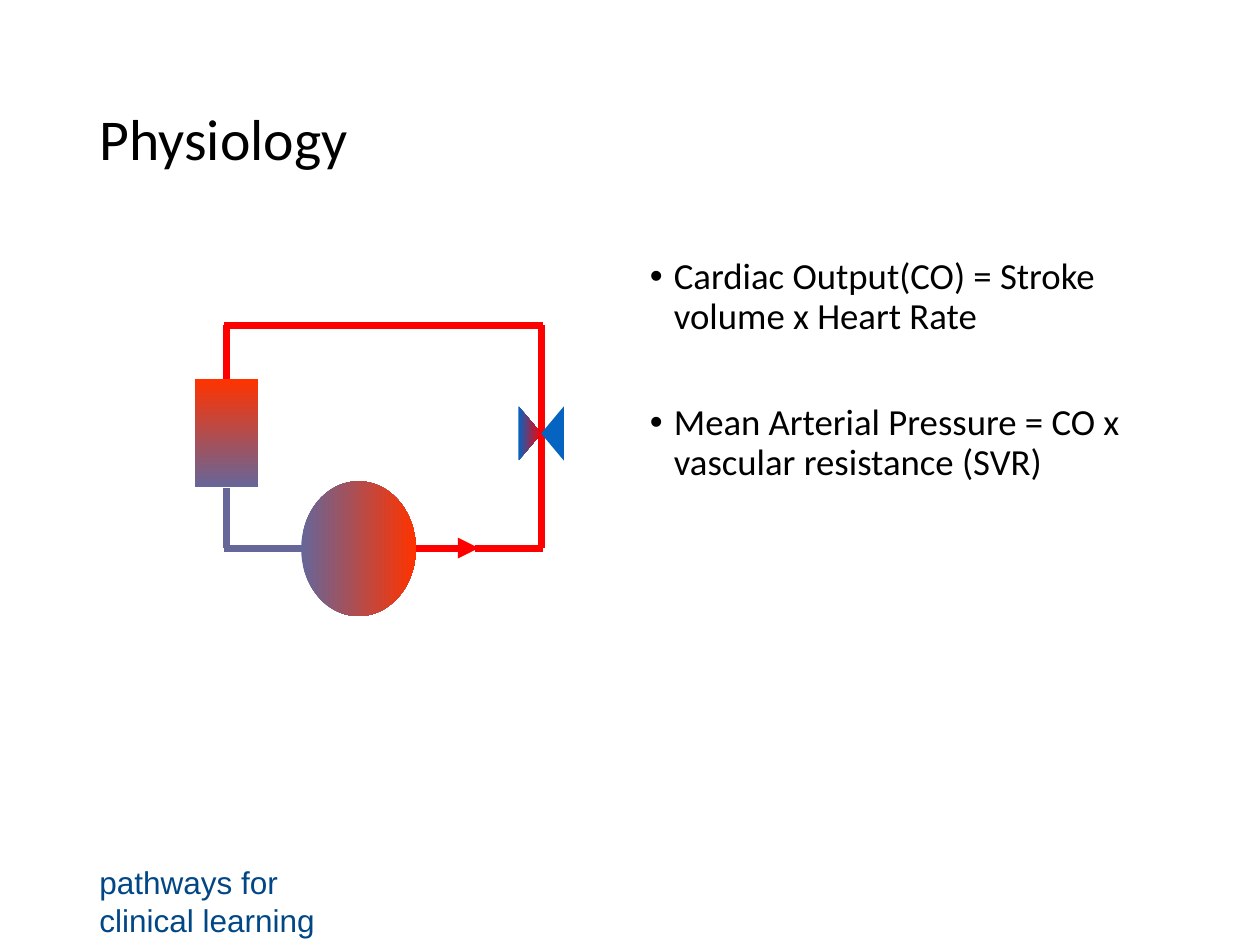
from lxml import etree
from pptx import Presentation
from pptx.dml.color import RGBColor
from pptx.enum.shapes import MSO_CONNECTOR, MSO_SHAPE
from pptx.enum.text import MSO_ANCHOR, PP_ALIGN
from pptx.oxml.ns import qn
from pptx.util import Inches, Pt

STRAIGHT = MSO_CONNECTOR.STRAIGHT
RECT = MSO_SHAPE.RECTANGLE
OVAL = MSO_SHAPE.OVAL
TRIANGLE = MSO_SHAPE.ISOSCELES_TRIANGLE
TOP, MIDDLE = MSO_ANCHOR.TOP, MSO_ANCHOR.MIDDLE
LEFT = PP_ALIGN.LEFT
BLACK = RGBColor(0x00, 0x00, 0x00)
NAVY = RGBColor(0x01, 0x47, 0x85)
BLUE = RGBColor(0x05, 0x63, 0xC1)
RED = RGBColor(0xFF, 0x00, 0x00)
ARTERIAL = RGBColor(0xFF, 0x33, 0x00)
VENOUS = RGBColor(0x66, 0x66, 0x99)
RECT_TOP, RECT_BOTTOM = 0, 2


class Deck:
    """Holds the style and the current slide."""

    font = "Calibri"
    line_width = Pt(4)

    def __init__(self, prs):
        self.s = prs.slides.add_slide(prs.slide_layouts[5])

    def add_text(self, p, text, size, color, font=None):
        r = p.add_run()
        r.text = text
        r.font.size = Pt(size)
        r.font.name = font or self.font
        r.font.color.rgb = color

    def title(self, text, box, size):
        sp = self.s.shapes.title
        sp.left, sp.top, sp.width, sp.height = (Inches(v) for v in box)
        tf = sp.text_frame
        tf.vertical_anchor = MIDDLE
        p = tf.paragraphs[0]
        p.alignment = LEFT
        p.line_spacing = 0.9
        self.add_text(p, text, size, BLACK)

    def frame(self, box, anchor):
        tf = self.s.shapes.add_textbox(*(Inches(v) for v in box)).text_frame
        tf.word_wrap = True
        tf.vertical_anchor = anchor
        return tf

    def label(self, text, box, size, color, font):
        tf = self.frame(box, MIDDLE)
        self.add_text(tf.paragraphs[0], text, size, color, font)

    def bullets(self, items, box, size, gap):
        tf = self.frame(box, TOP)
        for i, text in enumerate(items):
            p = tf.add_paragraph() if i else tf.paragraphs[0]
            pPr = p._p.get_or_add_pPr()
            pPr.set("marL", str(Inches(0.19)))
            pPr.set("indent", str(-Inches(0.19)))
            etree.SubElement(pPr, qn("a:buFont"), typeface="Arial")
            etree.SubElement(pPr, qn("a:buChar"), char="•")
            p.line_spacing = 0.9
            if i:
                p.space_before = Pt(gap)
            self.add_text(p, text, size, BLACK)

    def shape(self, kind, box, colors, angle=0, rotation=0):
        sp = self.s.shapes.add_shape(kind, *(Inches(v) for v in box))
        sp.shadow.inherit = False
        sp.line.fill.background()
        sp.rotation = rotation
        if len(colors) == 1:
            sp.fill.solid()
            sp.fill.fore_color.rgb = colors[0]
        else:
            sp.fill.gradient()
            sp.fill.gradient_angle = angle
            for stop, color, pos in zip(sp.fill.gradient_stops, colors, (0, 1)):
                stop.color.rgb = color
                stop.position = pos
        return sp

    def line(self, start, end, color, arrow=False):
        c = self.s.shapes.add_connector(
            STRAIGHT, *(Inches(v) for v in start + end))
        c.line.width = self.line_width
        c.line.color.rgb = color
        spPr = c._element.spPr
        if arrow:
            etree.SubElement(spPr.find(qn("a:ln")), qn("a:tailEnd"), type="triangle")
        etree.SubElement(spPr, qn("a:effectLst"))
        return c


def main():
    prs = Presentation()
    prs.slide_width, prs.slide_height = Inches(10), Inches(7.5)
    d = Deck(prs)
    d.title("Physiology", (0.69, 0.4, 8.62, 1.45), 33)
    d.bullets(("Cardiac Output(CO) = Stroke volume x Heart Rate",
               "Mean Arterial Pressure = CO x vascular resistance (SVR)"),
              (5.06, 2, 4.25, 4.76), 21, 38)
    d.label("pathways for clinical learning", (0.69, 6.95, 2.25, 0.4),
            18, NAVY, "Arial")

    left, right, top, bottom = 1.8, 4.3, 2.58, 4.35
    d.line((right + 0.01, top), (left - 0.02, top), RED)
    d.line((3.3, bottom), (3.8, bottom), RED, arrow=True)
    d.line((3.77, bottom), (right + 0.01, bottom), RED)
    d.line((right, bottom), (right, top), RED)
    d.line((2.42, bottom), (left - 0.02, bottom), VENOUS)

    d.shape(TRIANGLE, (4.17, 3.35, 0.43, 0.18), (BLUE,), rotation=270)
    d.shape(TRIANGLE, (3.99, 3.35, 0.43, 0.18), (BLUE, RED), 90, 90)
    d.shape(OVAL, (2.39, 3.82, 0.91, 1.07), (VENOUS, ARTERIAL))
    organ = d.shape(RECT, (1.55, 3.01, 0.5, 0.86), (ARTERIAL, VENOUS), 270)
    d.line((left, top), (left, 3.01), RED).end_connect(organ, RECT_TOP)
    d.line((left, bottom), (left, 3.87), VENOUS).end_connect(organ, RECT_BOTTOM)
    prs.save("out.pptx")


if __name__ == "__main__":
    main()
